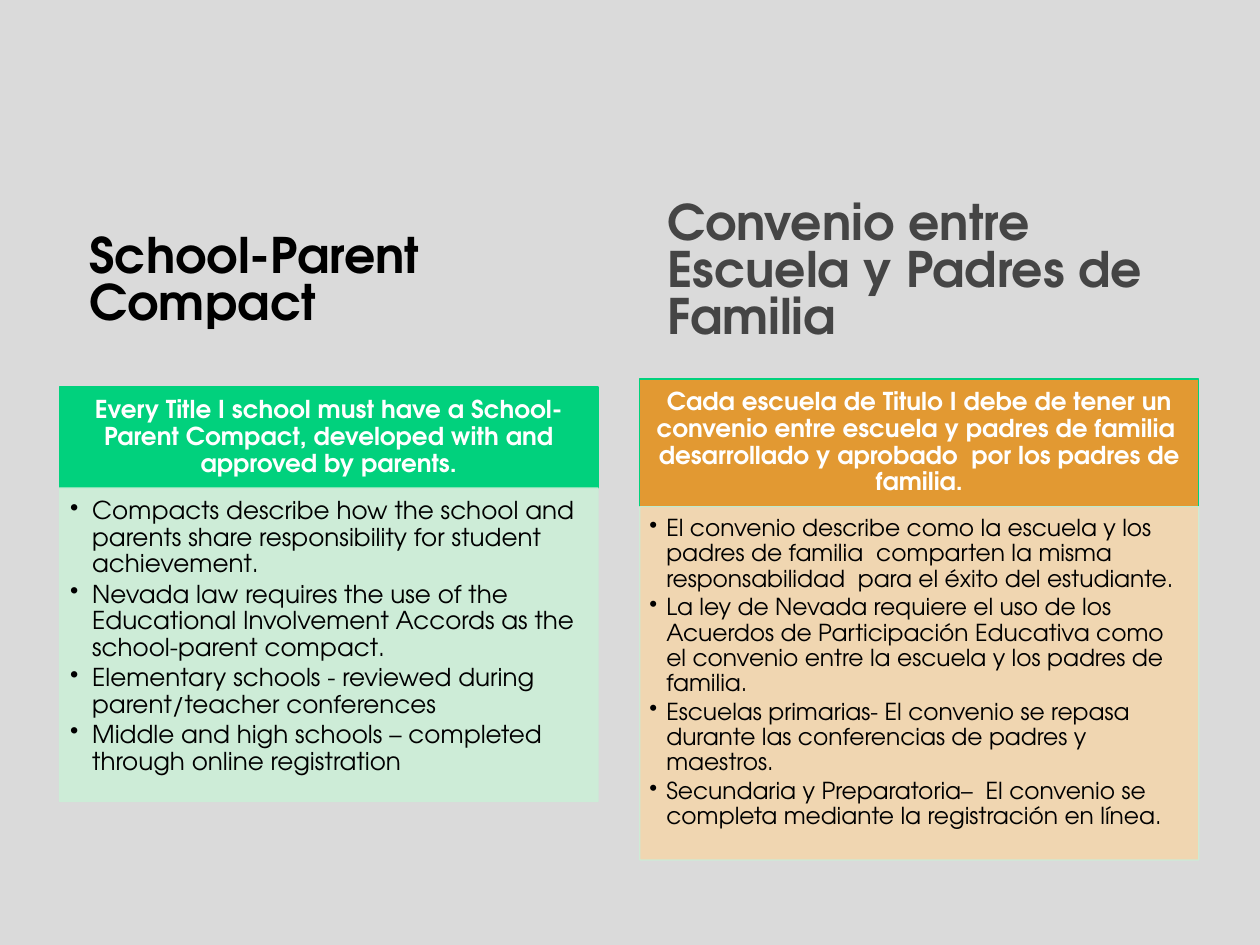
import pptx
import pptx.dml.color
import pptx.enum.shapes
import pptx.enum.text
import pptx.oxml.ns
import pptx.util
import lxml.etree

PX = 9144
FONT = "TeX Gyre Adventor"
ALIGN = pptx.enum.text.PP_ALIGN
ANCHOR = pptx.enum.text.MSO_ANCHOR


def px(length):
    return pptx.util.Emu(length * PX)


def color(hex_string):
    return pptx.dml.color.RGBColor.from_string(hex_string)


def add_child(parent, tag, **attributes):
    return lxml.etree.SubElement(parent, pptx.oxml.ns.qn(tag), attributes)


def style_paragraph(paragraph, size, hex_string, bold=False, line_spacing=0.9):
    paragraph.line_spacing = line_spacing
    paragraph.font.name = FONT
    paragraph.font.size = pptx.util.Pt(size)
    paragraph.font.bold = bold
    paragraph.font.color.rgb = color(hex_string)


def set_frame(shape, anchor, insets):
    frame = shape.text_frame
    frame.word_wrap = True
    frame.vertical_anchor = anchor
    (frame.margin_left, frame.margin_top,
     frame.margin_right, frame.margin_bottom) = map(px, insets)
    return frame


def add_title(slide, box, text, hex_string):
    shape = slide.shapes.add_textbox(*map(px, box))
    frame = set_frame(shape, ANCHOR.BOTTOM, (10, 5, 10, 5))
    paragraph = frame.paragraphs[0]
    paragraph.text = text
    style_paragraph(paragraph, 39.8, hex_string, bold=True, line_spacing=0.8)


def add_panel(slide, box, fill, line, opacity=100):
    shape = slide.shapes.add_shape(
        pptx.enum.shapes.MSO_SHAPE.RECTANGLE, *map(px, box))
    shape.shadow.inherit = False
    shape.fill.solid()
    shape.fill.fore_color.rgb = color(fill)
    shape.line.color.rgb = color(line)
    shape.line.width = pptx.util.Pt(1)
    if opacity < 100:
        for element in shape._element.spPr.iter(pptx.oxml.ns.qn("a:srgbClr")):
            add_child(element, "a:alpha", val=str(opacity * 1000))
    return shape


def add_header(slide, box, text, fill):
    shape = add_panel(slide, box, fill, "01D17D")
    paragraph = set_frame(shape, ANCHOR.MIDDLE, (16, 9, 16, 9)).paragraphs[0]
    paragraph.text = text
    paragraph.alignment = ALIGN.CENTER
    style_paragraph(paragraph, 20, "FFFFFF", bold=True)


def add_bullets(slide, box, items, fill, size, indent, insets):
    shape = add_panel(slide, box, fill, "CCEED7", opacity=90)
    frame = set_frame(shape, ANCHOR.TOP, insets)
    for index, item in enumerate(items):
        paragraph = frame.paragraphs[0] if index == 0 else frame.add_paragraph()
        paragraph.text = item
        paragraph.alignment = ALIGN.LEFT
        paragraph.space_after = pptx.util.Pt(round(size * 0.15, 2))
        properties = paragraph._p.get_or_add_pPr()
        properties.set("marL", str(px(indent)))
        properties.set("indent", str(-px(indent)))
        add_child(properties, "a:buChar", char="•")
        style_paragraph(paragraph, size, "000000")


def main():
    presentation = pptx.Presentation()
    presentation.slide_width = px(1422)
    presentation.slide_height = px(1067)
    slide = presentation.slides.add_slide(presentation.slide_layouts[6])
    slide.background.fill.solid()
    slide.background.fill.fore_color.rgb = color("DADADA")

    add_title(slide, (91, 250, 573, 128), "School-Parent Compact", "000000")
    add_header(
        slide, (67, 437, 608, 114),
        "Every Title I school must have a School-Parent Compact, "
        "developed with and approved by parents.", "01D17D")
    add_bullets(slide, (67, 551, 608, 354), [
        "Compacts describe how the school and parents share responsibility "
        "for student achievement.",
        "Nevada law requires the use of the Educational Involvement Accords "
        "as the school-parent compact.",
        "Elementary schools - reviewed during parent/teacher conferences",
        "Middle and high schools – completed through online registration",
    ], "CCEED7", 20, 25, (12, 12, 16, 17))

    add_title(slide, (743, 142, 587, 251),
              "Convenio entre Escuela y Padres de Familia", "454545")
    add_header(
        slide, (722, 428, 631, 144),
        "Cada escuela de Titulo I debe de tener un convenio entre escuela y "
        "padres de familia  desarrollado y aprobado  por los padres de "
        "familia.", "E29932")
    add_bullets(slide, (722, 572, 631, 399), [
        "El convenio describe como la escuela y los padres de familia  "
        "comparten la misma responsabilidad  para el éxito del estudiante.",
        "La ley de Nevada requiere el uso de los Acuerdos de Participación "
        "Educativa como el convenio entre la escuela y los padres de familia.",
        "Escuelas primarias- El convenio se repasa durante las conferencias "
        "de padres y maestros.",
        "Secundaria y Preparatoria–  El convenio se completa mediante la "
        "registración en línea.",
    ], "F3D6AD", 19, 19, (11, 11, 15, 17))

    presentation.save("out.pptx")


if __name__ == "__main__":
    main()
